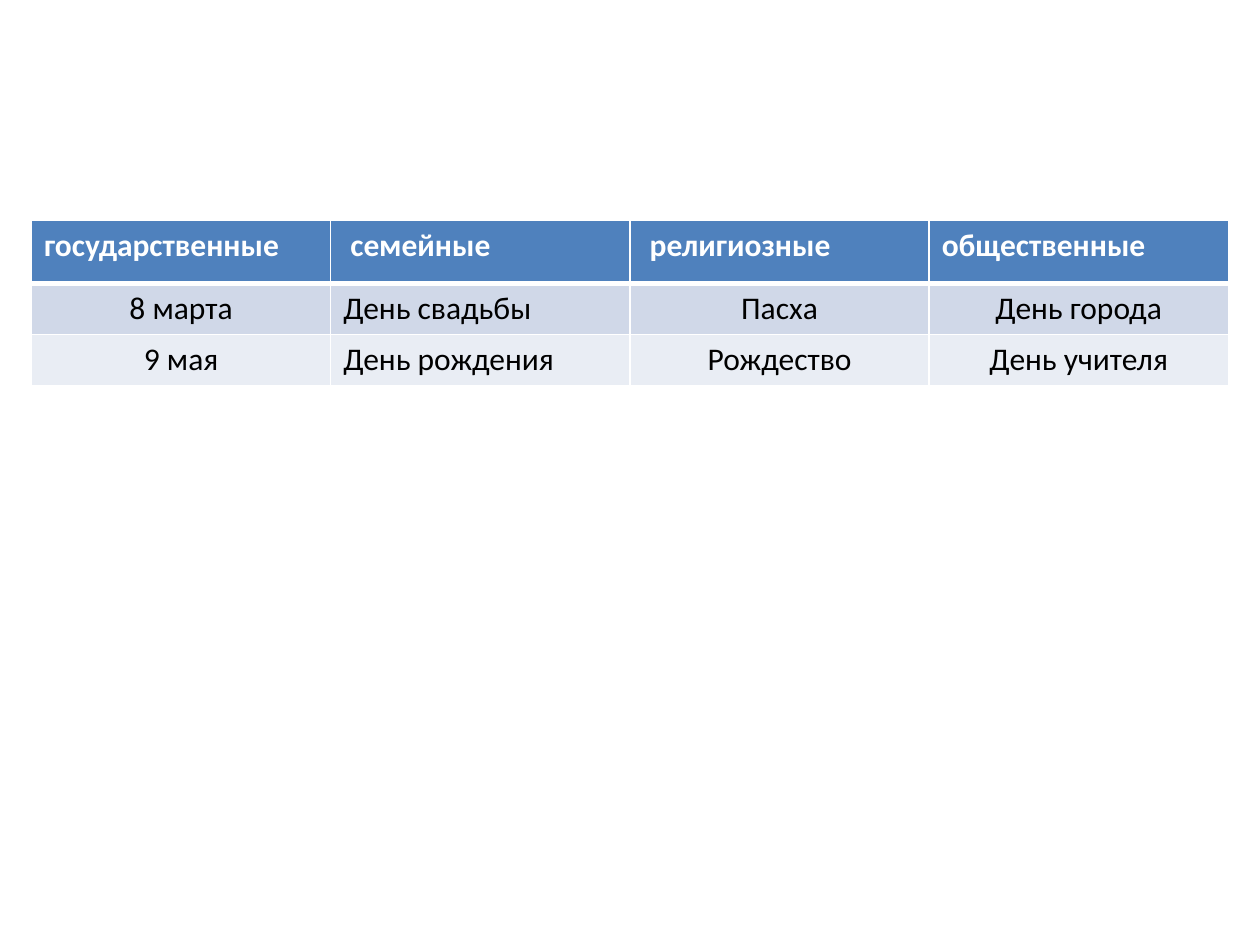
from lxml.etree import SubElement
from pptx import Presentation
from pptx.dml.color import RGBColor
from pptx.enum.text import PP_ALIGN
from pptx.oxml.ns import qn
from pptx.util import Inches, Pt

HEX = {"head": "4F81BD", "odd": "D0D8E8", "even": "E9EDF4",
       "rule": "FFFFFF", "light": "FFFFFF", "dark": "000000"}
ROWS = [
    ["государственные", " семейные", " религиозные", "общественные"],
    ["8 марта", "День свадьбы", "Пасха", "День города"],
    ["9 мая", "День рождения", "Рождество", "День учителя"],
]
FILLS = ["head", "odd", "even"]
HEIGHTS = [0.5, 0.4, 0.4]
LEFT, TOP, WIDTH = 0.25, 1.75, 9.5
FAMILY_COL = 1


def add_rules(cell, widths):
    """Draw the cell borders; widths maps a side (L, R, T, B) to points."""
    props = cell._tc.get_or_add_tcPr()
    for side, width in widths.items():
        line = SubElement(props, qn(f"a:ln{side}"), w=str(Pt(width)))
        fill = SubElement(line, qn("a:solidFill"))
        SubElement(fill, qn("a:srgbClr"), val=HEX["rule"])


def set_text(cell, text, color, bold, align):
    par = cell.text_frame.paragraphs[0]
    par.alignment = align
    run = par.add_run()
    run.text = text
    style = {"name": "Calibri", "size": Pt(18), "bold": bold}
    for name, value in style.items():
        setattr(run.font, name, value)
    run.font.color.rgb = RGBColor.from_string(HEX[color])


def fill_cell(cell, text, row, col):
    head = row == 0
    add_rules(cell, {"L": 1, "R": 1, "T": 3 if row == 1 else 1,
                     "B": 3 if head else 1})
    cell.fill.solid()
    cell.fill.fore_color.rgb = RGBColor.from_string(HEX[FILLS[row]])
    left = head or col == FAMILY_COL
    set_text(cell, text, "light" if head else "dark", head,
             PP_ALIGN.LEFT if left else PP_ALIGN.CENTER)


def add_feasts(slide):
    """Add the table of holidays by kind."""
    frame = slide.shapes.add_table(
        len(ROWS), len(ROWS[0]), Inches(LEFT), Inches(TOP),
        Inches(WIDTH), Inches(sum(HEIGHTS)))
    table = frame.table
    for row, texts in enumerate(ROWS):
        table.rows[row].height = Inches(HEIGHTS[row])
        for col, text in enumerate(texts):
            fill_cell(table.cell(row, col), text, row, col)


def main():
    deck = Presentation()
    deck.slide_width, deck.slide_height = Inches(10), Inches(7.5)
    slide = deck.slides.add_slide(deck.slide_layouts[6])
    add_feasts(slide)
    deck.save("out.pptx")


if __name__ == "__main__":
    main()
